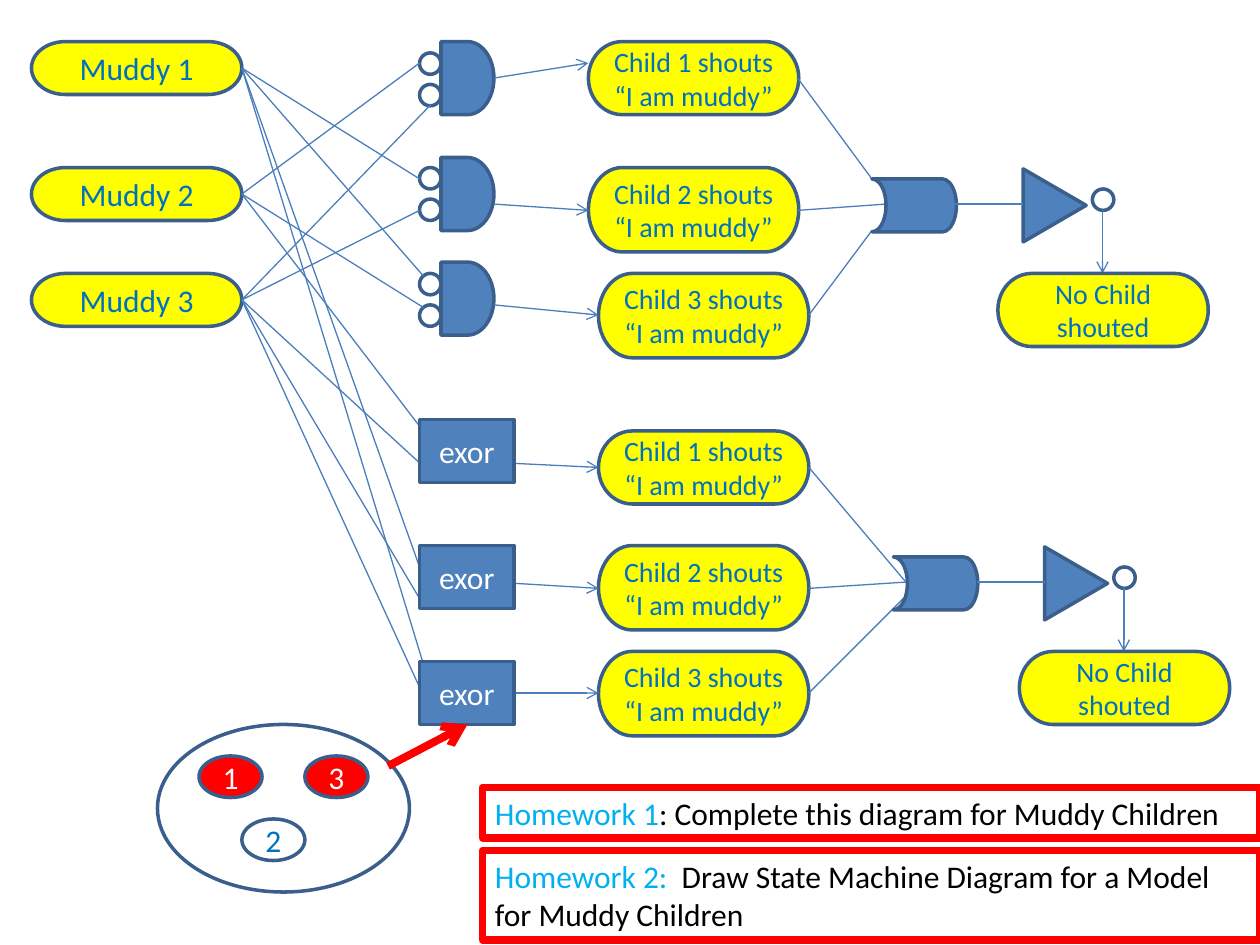
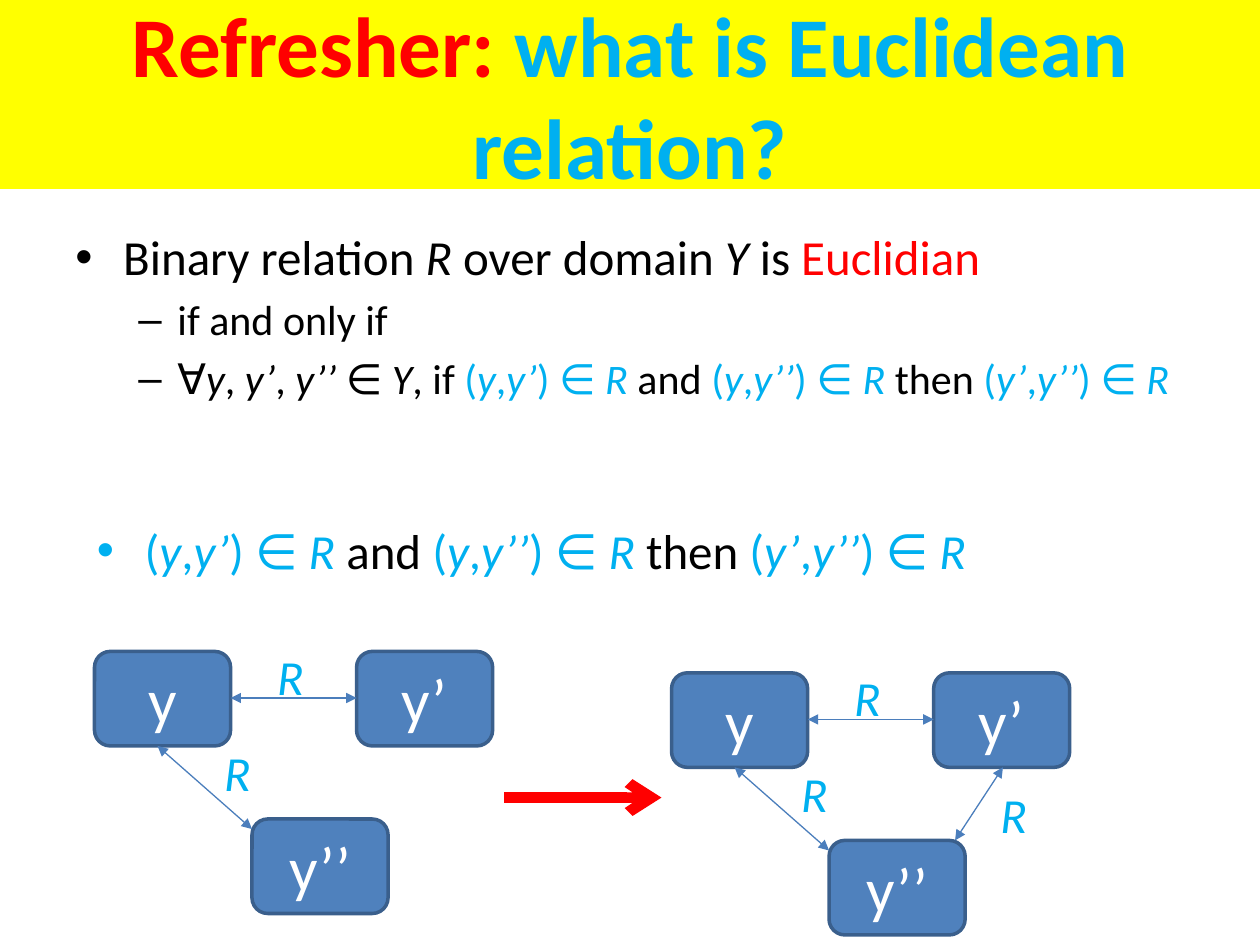
from dataclasses import dataclass

from lxml import etree
from pptx import Presentation
from pptx import util as u
from pptx.dml import color as dml
from pptx.enum import shapes as sh
from pptx.enum import text as tx
from pptx.oxml import ns

HUES = {
    "black": "000000", "white": "FFFFFF", "red": "FF0000", "yellow": "FFFF00",
    "blue": "4F81BD", "edge": "3A5F8C", "wire": "4B7EBC",
    "ink": "0070C0", "sky": "00B0F0",
}
FONT = "Calibri"
KIND = sh.MSO_SHAPE
ALIGN = tx.PP_ALIGN
ANCHOR = tx.MSO_ANCHOR
Runs = list[tuple[str, str]]


@dataclass
class Node:
    kind: int
    left: float
    top: float
    width: float
    height: float
    fill: str = ""
    label: str = ""
    size: float = 18
    ink: str = "white"
    edge: str = "edge"
    weight: float = 2
    turn: float = 0


@dataclass
class Link:
    start: tuple[float, float]
    end: tuple[float, float]
    head: str = ""
    tail: str = ""
    hue: str = "wire"
    weight: float = 0.75


def tint(name: str) -> dml.RGBColor:
    return dml.RGBColor.from_string(HUES[name])


def write(frame, runs: Runs, *, size: float, align=ALIGN.LEFT, bold: bool = False,
          bullet: str = "", left: float = 0, hang: float = 0, more: bool = False) -> None:
    """Write one paragraph of (text, hue) runs; underscores switch italics on and off."""
    para = frame.add_paragraph() if more else frame.paragraphs[0]
    para.alignment = align
    for words, hue in runs:
        for i, part in enumerate(words.split("_")):
            if part:
                run = para.add_run()
                run.text = part
                font = run.font
                font.name, font.size = FONT, u.Pt(size)
                font.bold, font.italic = bold, i % 2 == 1
                font.color.rgb = tint(hue)
    if bullet:
        para.space_before = u.Pt(size * 0.2)
        props = para._p.get_or_add_pPr()
        props.set("marL", str(u.Inches(left)))
        props.set("indent", str(u.Inches(-hang)))
        etree.SubElement(props, ns.qn("a:buFont"), typeface="Arial")
        etree.SubElement(props, ns.qn("a:buChar"), char=bullet)


def draw(slide, node: Node):
    shape = slide.shapes.add_shape(
        node.kind, u.Inches(node.left), u.Inches(node.top),
        u.Inches(node.width), u.Inches(node.height))
    shape.shadow.inherit = False
    shape.rotation = node.turn
    if node.fill:
        shape.fill.solid()
        shape.fill.fore_color.rgb = tint(node.fill)
    else:
        shape.fill.background()
    if node.edge:
        shape.line.color.rgb = tint(node.edge)
        shape.line.width = u.Pt(node.weight)
    else:
        shape.line.fill.background()
    if node.label:
        write(shape.text_frame, [(node.label, node.ink)],
              size=node.size, align=ALIGN.CENTER)
    return shape


def join(slide, link: Link) -> None:
    line = slide.shapes.add_connector(
        sh.MSO_CONNECTOR.STRAIGHT, *map(u.Inches, link.start + link.end))
    line.line.color.rgb = tint(link.hue)
    line.line.width = u.Pt(link.weight)
    props = line.element.spPr
    for tag, tip in (("a:headEnd", link.head), ("a:tailEnd", link.tail)):
        if tip:
            etree.SubElement(props.find(ns.qn("a:ln")), ns.qn(tag), type=tip)
    etree.SubElement(props, ns.qn("a:effectLst"))


def text_box(slide, left: float, top: float, width: float, height: float,
             wrap: bool = True):
    box = slide.shapes.add_textbox(*map(u.Inches, (left, top, width, height)))
    box.text_frame.word_wrap = wrap
    return box.text_frame


# Slide 1: circuit of the muddy children

def pill(slide, left: float, top: float, height: float, label: str,
         size: float = 16) -> None:
    draw(slide, Node(KIND.FLOWCHART_TERMINATOR, left, top, 1.67, height,
                     "yellow", label, size, "ink"))


def ring(slide, left: float, top: float) -> None:
    draw(slide, Node(KIND.OVAL, left, top, 0.17, 0.17))


def nor_gate(slide, dx: float, dy: float) -> None:
    """Draw the gate, its inverter and the result, moved by dx and dy."""
    draw(slide, Node(KIND.FLOWCHART_STORED_DATA, 6.92 + dx, 1.42 + dy,
                     0.67, 0.42, "blue", turn=180))
    draw(slide, Node(KIND.ISOSCELES_TRIANGLE, 8.08 + dx, 1.38 + dy,
                     0.58, 0.5, "blue", turn=90))
    ring(slide, 8.67 + dx, 1.5 + dy)
    join(slide, Link((7.58 + dx, 1.62 + dy), (8.12 + dx, 1.62 + dy)))
    join(slide, Link((8.75 + dx, 1.67 + dy), (8.75 + dx, 2.17 + dy), tail="arrow"))
    pill(slide, 7.92 + dx, 2.17 + dy, 0.58, "No Child shouted")


INPUTS = (0.33, 1.33, 2.17)
AND_GATES = ((0.33, 0.42), (1.25, 1.33), (2.08, 2.17))
EXORS = (3.33, 4.33, 5.25)
SHOUTS = (
    (4.67, 0.33, 0.58), (4.67, 1.33, 0.67), (4.75, 2.17, 0.67),
    (4.75, 3.42, 0.58), (4.75, 4.33, 0.67), (4.75, 5.17, 0.67),
)
FANS = {
    0.54: ((3.33, 1.42), (3.36, 2.19), (3.33, 4.5), (3.36, 5.27)),
    1.54: ((3.33, 0.5), (3.36, 2.44), (3.42, 3.5)),
    2.38: ((3.42, 0.83), (3.33, 1.67), (3.5, 3.83), (3.33, 4.75), (3.36, 5.52)),
}
CALLS = (
    ((3.92, 0.62), (4.67, 0.5)), ((3.92, 1.62), (4.67, 1.67)),
    ((3.92, 2.42), (4.75, 2.5)), ((3.92, 3.67), (4.75, 3.71)),
    ((3.92, 4.62), (4.75, 4.67)), ((3.83, 5.5), (4.75, 5.5)),
)
MERGES = (
    ((6.33, 0.62), (6.92, 1.42)), ((6.33, 1.67), (7.03, 1.62)),
    ((6.42, 2.5), (6.92, 1.83)), ((6.42, 3.71), (7.19, 4.62)),
    ((6.42, 4.67), (7.19, 4.62)), ((6.42, 5.5), (7.17, 4.75)),
)
KIDS = (("1", 1.58, 6, "red", "white"), ("2", 1.92, 6.5, "", "ink"),
        ("3", 2.42, 6, "red", "white"))
TASKS = (
    (6.25, 0.4, "Homework 1", ": Complete this diagram for Muddy Children"),
    (6.75, 0.71, "Homework 2: ",
     " Draw State Machine Diagram for a Model for Muddy Children"),
)


def circuit(slide) -> None:
    for i, top in enumerate(INPUTS, 1):
        pill(slide, 0.25, top, 0.42, f"Muddy {i}", 18)
    for top, dot in AND_GATES:
        draw(slide, Node(KIND.FLOWCHART_DELAY, 3.5, top, 0.42, 0.58, "blue"))
        for step in (0, 0.25):
            ring(slide, 3.33, dot + step)
    for i, (left, top, height) in enumerate(SHOUTS):
        pill(slide, left, top, height, f"Child {i % 3 + 1} shouts “I am muddy”")
    for y, ends in FANS.items():
        for end in ends:
            join(slide, Link((1.92, y), end))
    for start, end in CALLS:
        join(slide, Link(start, end, tail="arrow"))
    for start, end in MERGES:
        join(slide, Link(start, end))
    for top in EXORS:
        draw(slide, Node(KIND.RECTANGLE, 3.33, top, 0.75, 0.5, "blue", "exor"))
    nor_gate(slide, 0, 0)
    nor_gate(slide, 0.17, 3)

    for label, left, top, fill, ink in KIDS:
        draw(slide, Node(KIND.OVAL, left, top, 0.5, 0.33, fill, label, ink=ink))
    draw(slide, Node(KIND.OVAL, 1.25, 5.75, 2, 1.33))
    join(slide, Link((3.08, 6.08), (3.71, 5.75), tail="arrow", hue="red", weight=4.5))

    for top, height, name, task in TASKS:
        box = draw(slide, Node(KIND.RECTANGLE, 3.83, top, 6.17, height,
                               edge="red", weight=4.5))
        box.text_frame.vertical_anchor = ANCHOR.TOP
        write(box.text_frame, [(name, "sky"), (task, "black")], size=18)


# Slide 2: Euclidean relation

RULE: Runs = [
    ("(_y_,_y’_) ∈ _R _", "sky"), ("and ", "black"),
    ("(_y_,_y’’_) ∈ _R _", "sky"), ("then ", "black"),
    ("(_y’_,_y’’_) ∈ _R_", "sky"),
]
CELLS = (("y", 0.75, 5.17), ("y’", 2.83, 5.17), ("y’’", 2, 6.5))
TIES = (
    ((1.83, 5.54), (2.83, 5.54), (2.1, 5.08)),
    ((1.25, 5.92), (2, 6.58), (1.68, 5.84)),
    ((3, 6.5), (3.38, 5.92), (3.26, 6.01)),
)


def web(slide, dx: float, dy: float, count: int) -> None:
    """Draw the three cells and the first count ties, moved by dx and dy."""
    for label, left, top in CELLS:
        draw(slide, Node(KIND.ROUNDED_RECTANGLE, left + dx, top + dy,
                         1.08, 0.75, "blue", label, 36))
    for (x1, y1), (x2, y2), (left, top) in TIES[:count]:
        join(slide, Link((x1 + dx, y1 + dy), (x2 + dx, y2 + dy),
                         "triangle", "triangle"))
        frame = text_box(slide, left + dx, top + dy, 0.41, 0.57, wrap=False)
        write(frame, [("_R_", "sky")], size=28)


def euclid(slide) -> None:
    band = draw(slide, Node(KIND.RECTANGLE, 0, 0, 10, 1.5, "yellow", edge=""))
    write(band.text_frame,
          [("Refresher: ", "red"), ("what is Euclidean relation?", "sky")],
          size=48.6, bold=True, align=ALIGN.CENTER)

    body = text_box(slide, 0.5, 1.75, 9, 1.58)
    main_point = dict(size=28, bullet="•", left=0.38, hang=0.38)
    sub_point = dict(size=24, bullet="–", left=0.81, hang=0.31, more=True)
    write(body, [("Binary relation _R_ over domain _Y_ is ", "black"),
                 ("Euclidian", "red")], **main_point)
    write(body, [("if and only if", "black")], **sub_point)
    write(body, [("∀_y_, _y’_, _y’’ _∈ _Y_, if ", "black"), *RULE], **sub_point)
    write(text_box(slide, 0.67, 4.08, 9, 0.75), RULE, **main_point)

    web(slide, 0, 0, 2)
    web(slide, 4.58, 0.17, 3)
    join(slide, Link((4, 6.33), (5.25, 6.33), tail="arrow", hue="red", weight=6))


def main() -> None:
    deck = Presentation()
    deck.slide_width, deck.slide_height = u.Inches(10), u.Inches(7.5)
    for build in (circuit, euclid):
        build(deck.slides.add_slide(deck.slide_layouts[6]))
    deck.save("out.pptx")


if __name__ == "__main__":
    main()
